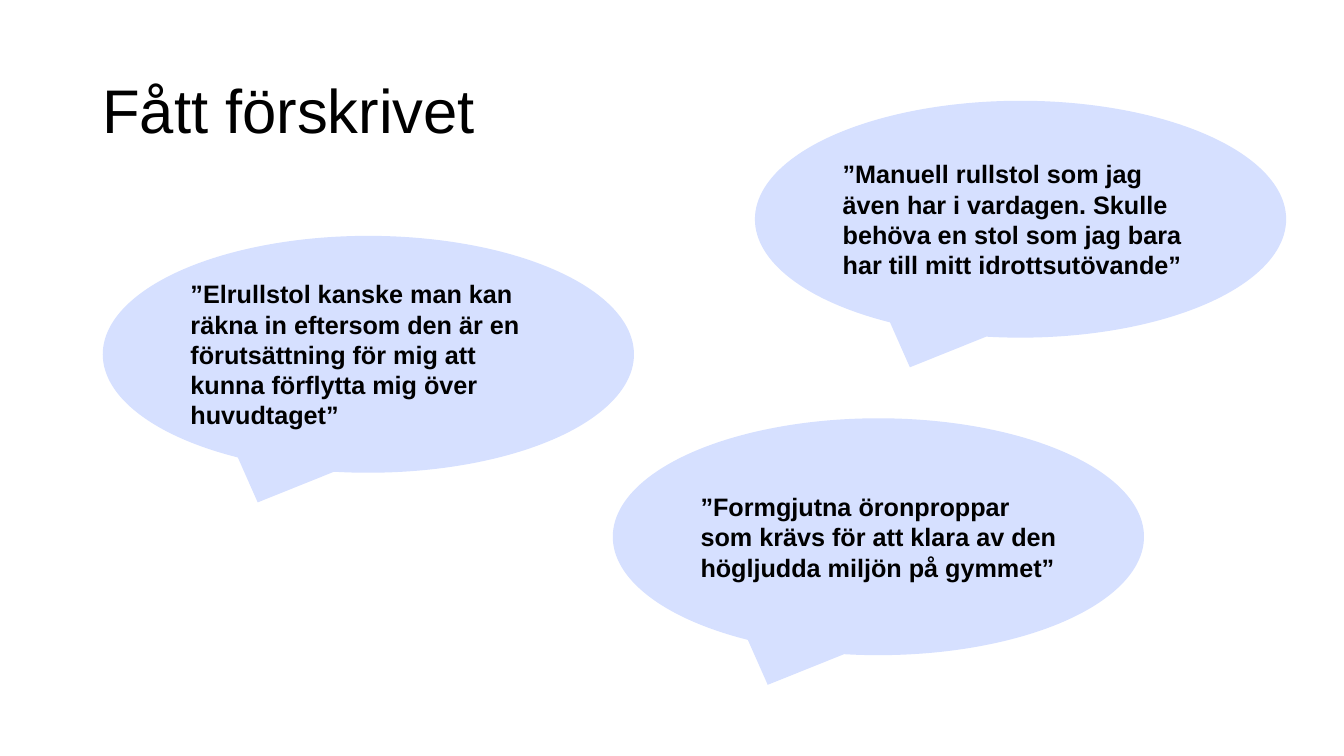
from pptx import Presentation
from pptx.dml.color import RGBColor
from pptx.enum.shapes import MSO_SHAPE
from pptx.enum.text import MSO_ANCHOR, PP_ALIGN
from pptx.util import Pt

BUBBLE_WIDTH, BUBBLE_HEIGHT = 379.44, 169.2
QUOTES = [
    (539.28, 72, "”Manuell rullstol som jag även har i vardagen. Skulle behöva "
                 "en stol som jag bara har till mitt idrottsutövande”"),
    (73.44, 168.48, "”Elrullstol kanske man kan räkna in eftersom den är en "
                    "förutsättning för mig att kunna förflytta mig över huvudtaget”"),
    (437.76, 298.8, "”Formgjutna öronproppar som krävs för att klara av den "
                    "högljudda miljön på gymmet”"),
]


def color(value):
    return RGBColor.from_string(value)


def write(shape, text, size, bold=False, line_spacing=1.0):
    frame = shape.text_frame
    frame.text = text
    frame.word_wrap = True
    frame.vertical_anchor = MSO_ANCHOR.MIDDLE
    paragraph = frame.paragraphs[0]
    paragraph.alignment = PP_ALIGN.LEFT
    paragraph.line_spacing = line_spacing
    font = paragraph.runs[0].font
    font.name = "Arial"
    font.size = Pt(size)
    font.bold = bold
    font.color.rgb = color("000000")


def add_title(slide, text):
    title = slide.shapes.add_textbox(Pt(66), Pt(28.8), Pt(813.6), Pt(104.4))
    write(title, text, 44, line_spacing=0.9)


def add_quote(slide, left, top, text):
    bubble = slide.shapes.add_shape(
        MSO_SHAPE.OVAL_CALLOUT, Pt(left), Pt(top), Pt(BUBBLE_WIDTH), Pt(BUBBLE_HEIGHT))
    bubble.shadow.inherit = False
    bubble.fill.solid()
    bubble.fill.fore_color.rgb = color("D6E0FF")
    bubble.line.fill.background()
    write(bubble, text, 18, bold=True)


def main():
    deck = Presentation()
    deck.slide_width, deck.slide_height = Pt(960), Pt(540)
    slide = deck.slides.add_slide(deck.slide_layouts[6])
    add_title(slide, "Fått förskrivet")
    for left, top, text in QUOTES:
        add_quote(slide, left, top, text)
    deck.save("out.pptx")


if __name__ == "__main__":
    main()
